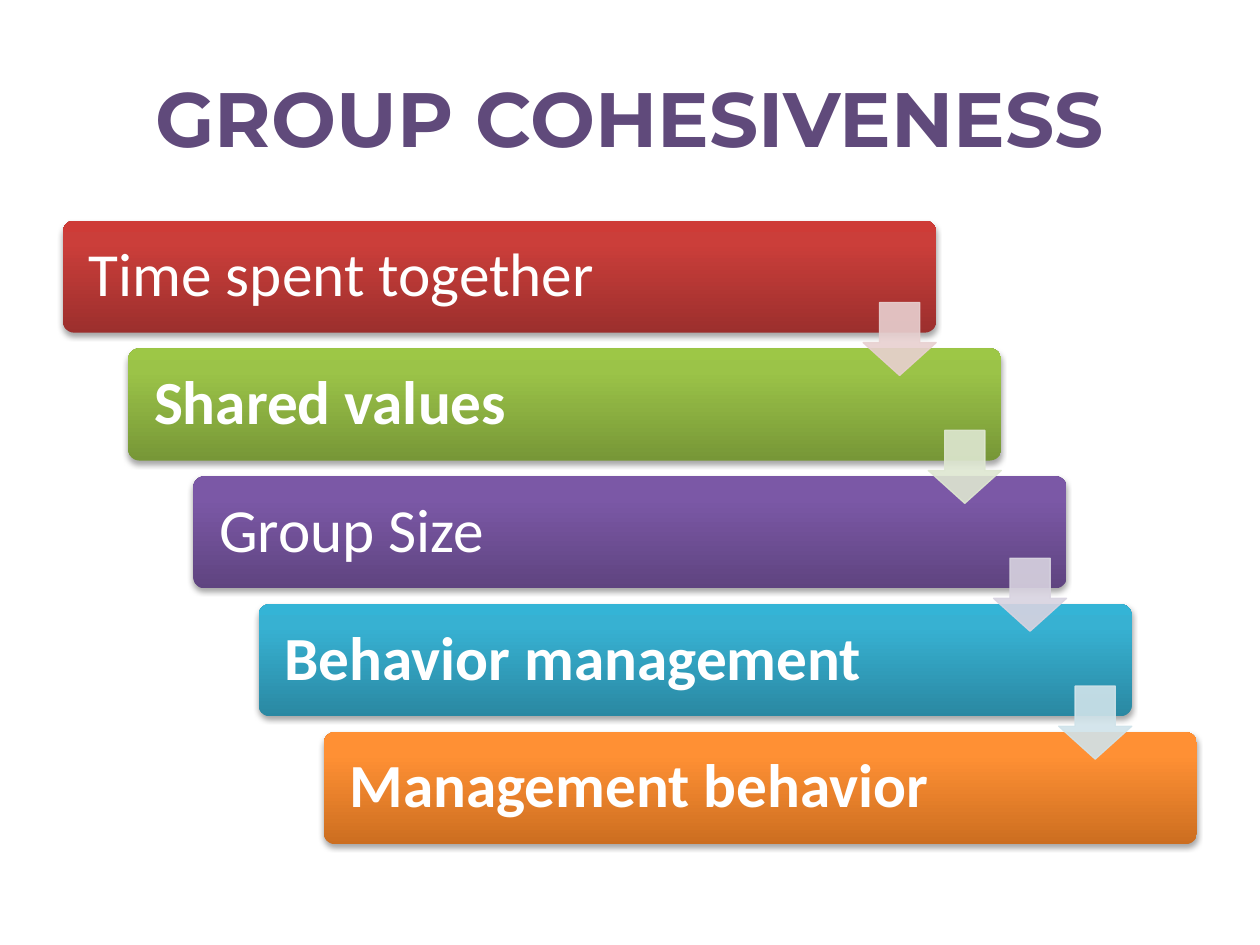
from copy import deepcopy
from dataclasses import dataclass

from lxml import etree
from pptx import Presentation
from pptx import util as u
from pptx.dml.color import RGBColor
from pptx.enum import shapes, text
from pptx.oxml import ns


@dataclass(frozen=True)
class Theme:
    """Colours, fonts and type sizes of the slide."""
    title: str = "604A7B"
    label: str = "FFFFFF"
    shade: str = "000000"
    head_font: str = "Montserrat"
    body_font: str = "Calibri"
    head_size: int = 44
    body_size: int = 35


THEME = Theme()
STEPS = [
    ("Time spent together", False, ("9C2F2D", "CB3E3A", "CE3B37"), "E8D0D0"),
    ("Shared values", True, ("779737", "9BC348", "9DC746"), "DEE7D1"),
    ("Group Size", False, ("5F4480", "7B58A6", "7C57A8"), "D8D3E0"),
    ("Behavior management", True, ("2A88A2", "37B1D2", "34B4D6"), "D0E3EA"),
    ("Management behavior", True, ("CC6E20", "FF9034", "FF9136"), None),
]
LEFT, TOP, WIDE, HIGH = 0.5, 1.75, 6.93, 0.89
STEP_X, STEP_Y = 2.07 / 4, 4.06 / 4
ARROW = 0.58


def style(part, font, size, hue, bold):
    """Format every run in the first paragraph."""
    for run in part.paragraphs[0].runs:
        run.font.name = font
        run.font.size = u.Pt(size)
        run.font.bold = bold
        run.font.color.rgb = RGBColor.from_string(hue)


def add_title(slide, words):
    """Place and format the title."""
    title = slide.shapes.title
    title.left, title.top = u.Inches(0.5), u.Inches(0.3)
    title.width, title.height = u.Inches(9), u.Inches(1.25)
    frame = title.text_frame
    frame.text = words
    frame.vertical_anchor = text.MSO_ANCHOR.MIDDLE
    frame.paragraphs[0].alignment = text.PP_ALIGN.CENTER
    style(frame, THEME.head_font, THEME.head_size, THEME.title, True)


def blend(shape, hues):
    """Fill a shape with three colours from the bottom up."""
    shape.fill.gradient()
    shape.fill.gradient_angle = 90
    stops = shape._element.spPr.find(".//" + ns.qn("a:gsLst"))
    stops.append(deepcopy(stops[-1]))
    for stop, hue, spot in zip(shape.fill.gradient_stops, hues, (0, 0.8, 1)):
        stop.color.rgb = RGBColor.from_string(hue)
        stop.position = spot


def cast(shape):
    """Give a shape a soft shadow below it."""
    shape.shadow.inherit = False
    glow = shape._element.spPr.find(ns.qn("a:effectLst"))
    drop = etree.SubElement(glow, ns.qn("a:outerShdw"), blurRad=str(u.Pt(3.1)),
                            dist=str(u.Pt(1.8)), dir="5400000", rotWithShape="0")
    hue = etree.SubElement(drop, ns.qn("a:srgbClr"), val=THEME.shade)
    etree.SubElement(hue, ns.qn("a:alpha"), val="35000")


def add_bar(slide, left, top, words, bold, hues):
    """Draw one labelled step."""
    bar = slide.shapes.add_shape(
        shapes.MSO_SHAPE.ROUNDED_RECTANGLE,
        u.Inches(left), u.Inches(top), u.Inches(WIDE), u.Inches(HIGH))
    bar.adjustments[0] = 0.1
    blend(bar, hues)
    bar.line.fill.background()
    cast(bar)
    frame = bar.text_frame
    frame.text = words
    frame.word_wrap = True
    frame.vertical_anchor = text.MSO_ANCHOR.MIDDLE
    frame.margin_left = frame.margin_right = u.Inches(0.18)
    frame.paragraphs[0].alignment = text.PP_ALIGN.LEFT
    frame.paragraphs[0].line_spacing = 0.9
    style(frame, THEME.body_font, THEME.body_size, THEME.label, bold)


def add_arrow(slide, left, top, hue):
    """Draw a translucent arrow down to the next step."""
    arrow = slide.shapes.add_shape(
        shapes.MSO_SHAPE.DOWN_ARROW,
        u.Inches(left), u.Inches(top), u.Inches(ARROW), u.Inches(ARROW))
    arrow.adjustments[0], arrow.adjustments[1] = 0.55, 0.45
    arrow.shadow.inherit = False
    arrow.line.width = u.Pt(0.75)
    for fill in (arrow.fill, arrow.line.fill):
        fill.solid()
        fill.fore_color.rgb = RGBColor.from_string(hue)
    for tone in arrow._element.spPr.iter(ns.qn("a:srgbClr")):
        etree.SubElement(tone, ns.qn("a:alpha"), val="90000")


def main():
    """Build and save the slide."""
    deck = Presentation()
    deck.slide_width, deck.slide_height = u.Inches(10), u.Inches(7.5)
    slide = deck.slides.add_slide(deck.slide_layouts[5])
    add_title(slide, "GROUP COHESIVENESS")
    spots = [(LEFT + i * STEP_X, TOP + i * STEP_Y) for i in range(len(STEPS))]
    for (left, top), (words, bold, hues, _) in zip(spots, STEPS):
        add_bar(slide, left, top, words, bold, hues)
    for (left, top), (*_, hue) in zip(spots[:-1], STEPS):
        add_arrow(slide, left + WIDE - ARROW, top + 0.65, hue)
    deck.save("out.pptx")


if __name__ == "__main__":
    main()
